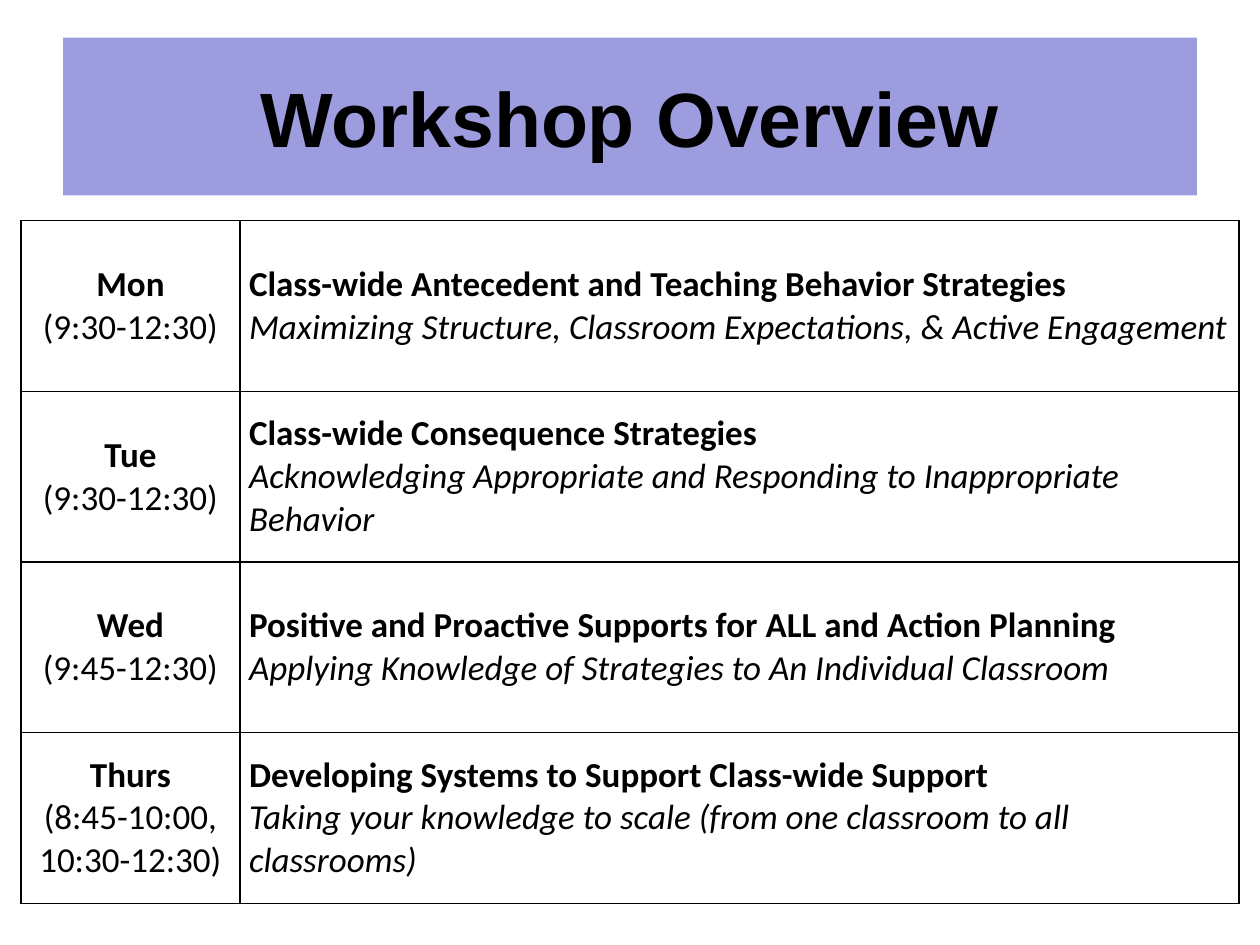
"""Build the workshop overview slide with its four-day timetable."""
from lxml import etree
from pptx import Presentation
from pptx import util as u
from pptx.dml.color import RGBColor
from pptx.enum import text
from pptx.oxml import ns

TITLE = "Workshop Overview"
DAYS = [
    (["Mon", "(9:30-12:30)"],
     ["Class-wide Antecedent and Teaching Behavior Strategies",
      "Maximizing Structure, Classroom Expectations, & Active Engagement"]),
    (["Tue", "(9:30-12:30)"],
     ["Class-wide Consequence Strategies",
      "Acknowledging Appropriate and Responding to Inappropriate Behavior"]),
    (["Wed", "(9:45-12:30)"],
     ["Positive and Proactive Supports for ALL and Action Planning",
      "Applying Knowledge of Strategies to An Individual Classroom"]),
    (["Thurs", "(8:45-10:00,", "10:30-12:30)"],
     ["Developing Systems to Support Class-wide Support",
      "Taking your knowledge to scale (from one classroom to all classrooms)"]),
]
HUES = {"band": "9C9CDF", "ink": "000000"}
WIDTHS = [4.42, 20.14]
HIGH = 3.44
MIDDLE = text.MSO_ANCHOR.MIDDLE
CENTER, LEFT = text.PP_ALIGN.CENTER, text.PP_ALIGN.LEFT
HEAD = {"name": "Arial", "size": u.Pt(44), "bold": True}
BODY = {"name": "Calibri", "size": u.Pt(20)}
INSET = {"margin_left": u.Cm(0.18), "margin_right": u.Cm(0.18),
         "margin_top": 0, "margin_bottom": 0, "vertical_anchor": MIDDLE}


def apply(item, look):
    for key, val in look.items():
        setattr(item, key, val)


def write(para, words, align, look):
    para.alignment = align
    run = para.add_run()
    run.text = words
    apply(run.font, look)
    run.font.color.rgb = RGBColor.from_string(HUES["ink"])


def border(cell):
    props = cell._tc.get_or_add_tcPr()
    for spot, side in enumerate(("lnL", "lnR", "lnT", "lnB")):
        line = etree.Element(ns.qn("a:" + side), w=str(u.Pt(1)))
        fill = etree.SubElement(line, ns.qn("a:solidFill"))
        etree.SubElement(fill, ns.qn("a:srgbClr"), val=HUES["ink"])
        props.insert(spot, line)


def fill_cell(cell, lines, align, slant):
    apply(cell, INSET)
    cell.fill.background()
    border(cell)
    frame = cell.text_frame
    for row, words in enumerate(lines):
        para = frame.add_paragraph() if row else frame.paragraphs[0]
        look = {**BODY, "bold": row == 0, "italic": slant and row > 0}
        write(para, words, align, look)


def main():
    deck = Presentation()
    apply(deck, {"slide_width": u.Cm(25.4), "slide_height": u.Cm(19.05)})
    slide = deck.slides.add_slide(deck.slide_layouts[5])

    title = slide.shapes.title
    apply(title, {"left": u.Cm(1.27), "top": u.Cm(0.76),
                  "width": u.Cm(22.86), "height": u.Cm(3.18)})
    title.fill.solid()
    title.fill.fore_color.rgb = RGBColor.from_string(HUES["band"])
    title.text_frame.vertical_anchor = MIDDLE
    write(title.text_frame.paragraphs[0], TITLE, CENTER, HEAD)

    grid = slide.shapes.add_table(
        len(DAYS), len(WIDTHS), u.Cm(0.42), u.Cm(4.45),
        u.Cm(sum(WIDTHS)), u.Cm(HIGH * len(DAYS))).table
    apply(grid, {"first_row": False, "horz_banding": False})
    for col, wide in zip(grid.columns, WIDTHS):
        col.width = u.Cm(wide)
    for row, (when, topic) in enumerate(DAYS):
        grid.rows[row].height = u.Cm(HIGH)
        fill_cell(grid.cell(row, 0), when, CENTER, False)
        fill_cell(grid.cell(row, 1), topic, LEFT, True)

    deck.save("out.pptx")


if __name__ == "__main__":
    main()
